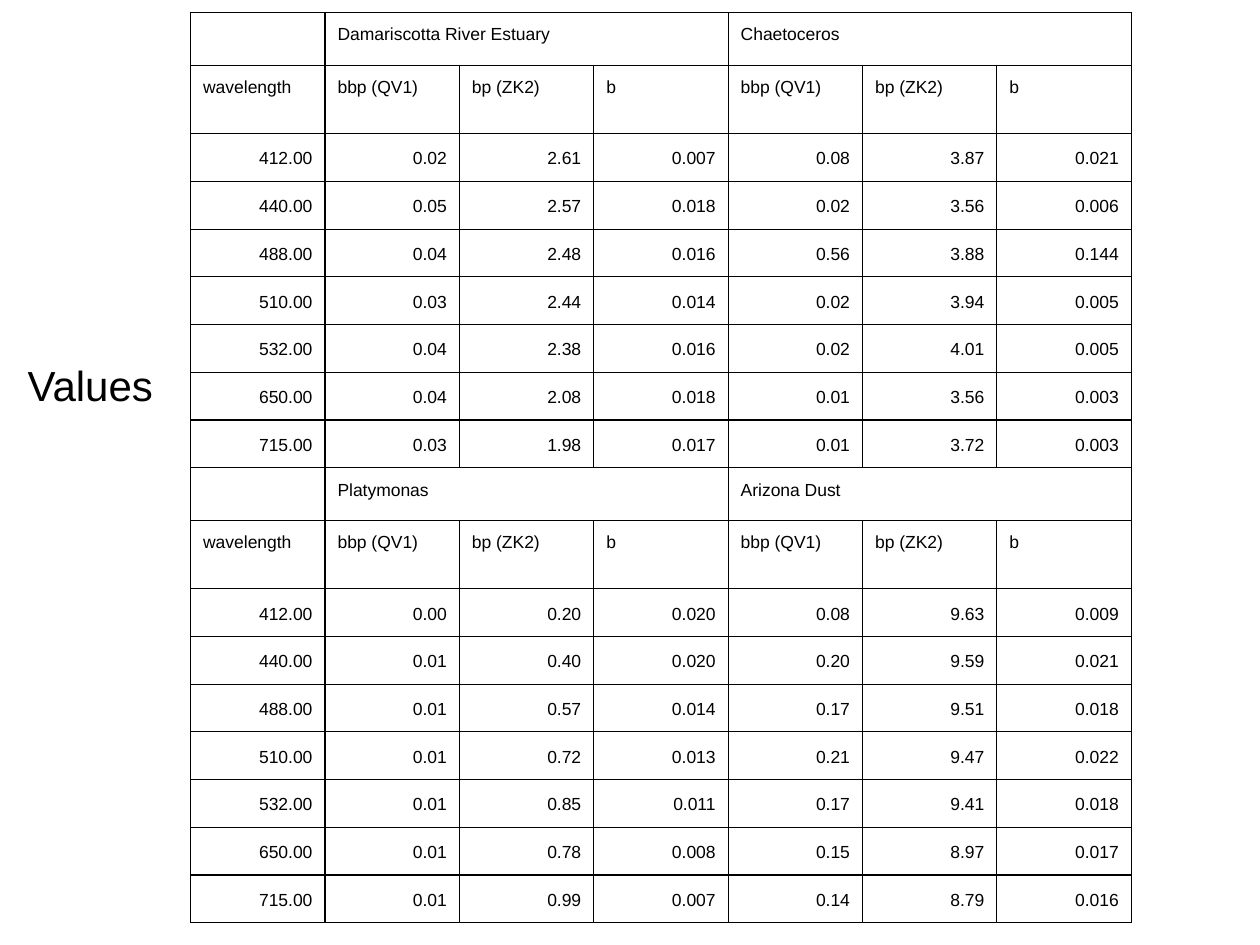
from lxml import etree
from pptx import Presentation
from pptx import util as u
from pptx.dml.color import RGBColor
from pptx.enum import text
from pptx.oxml import ns

Pt = u.Pt
BLACK = RGBColor(0, 0, 0)
WHITE = RGBColor(255, 255, 255)

WAVES = ["412.00", "440.00", "488.00", "510.00", "532.00", "650.00", "715.00"]
HEADS = ["bbp (QV1)", "bp (ZK2)", "b"]
BLOCKS = [
    (("Damariscotta River Estuary", "Chaetoceros"), [
        "0.02 2.61 0.007 0.08 3.87 0.021",
        "0.05 2.57 0.018 0.02 3.56 0.006",
        "0.04 2.48 0.016 0.56 3.88 0.144",
        "0.03 2.44 0.014 0.02 3.94 0.005",
        "0.04 2.38 0.016 0.02 4.01 0.005",
        "0.04 2.08 0.018 0.01 3.56 0.003",
        "0.03 1.98 0.017 0.01 3.72 0.003",
    ]),
    (("Platymonas", "Arizona Dust"), [
        "0.00 0.20 0.020 0.08 9.63 0.009",
        "0.01 0.40 0.020 0.20 9.59 0.021",
        "0.01 0.57 0.014 0.17 9.51 0.018",
        "0.01 0.72 0.013 0.21 9.47 0.022",
        "0.01 0.85 0.011 0.17 9.41 0.018",
        "0.01 0.78 0.008 0.15 8.97 0.017",
        "0.01 0.99 0.007 0.14 8.79 0.016",
    ]),
]
NAME_HIGH, HEAD_HIGH, DATA_HIGH = 30.2, 39, 27.2
COL_WIDE = 76.8


def assign(item, values):
    for key, value in values.items():
        setattr(item, key, value)


class Deck:
    font = "Arial"
    pads = {f"margin_{side}": Pt(7.2) for side in ("left", "top", "right", "bottom")}

    def __init__(self, wide, high):
        self.prs = Presentation()
        assign(self.prs, {"slide_width": Pt(wide), "slide_height": Pt(high)})
        self.slide = self.prs.slides.add_slide(self.prs.slide_layouts[5])
        self.slide.background.fill.solid()
        self.slide.background.fill.fore_color.rgb = WHITE

    def style(self, para, size):
        for run in para.runs:
            assign(run.font, {"name": self.font, "size": Pt(size)})
            run.font.color.rgb = BLACK

    def title(self, words, left, top, wide, high):
        box = self.slide.shapes.title
        assign(box, {"left": Pt(left), "top": Pt(top),
                     "width": Pt(wide), "height": Pt(high)})
        frame = box.text_frame
        frame.text = words
        assign(frame, {**self.pads, "word_wrap": True,
                       "auto_size": text.MSO_AUTO_SIZE.NONE,
                       "vertical_anchor": text.MSO_ANCHOR.MIDDLE})
        para = frame.paragraphs[0]
        para.alignment = text.PP_ALIGN.LEFT
        self.style(para, 24)

    def border(self, cell):
        props = cell._tc.get_or_add_tcPr()
        for side in "LRTB":
            line = etree.SubElement(props, ns.qn(f"a:ln{side}"), w=str(Pt(0.75)))
            fill = etree.SubElement(line, ns.qn("a:solidFill"))
            etree.SubElement(fill, ns.qn("a:srgbClr"), val=str(BLACK))

    def cell(self, cell, words, data):
        cell.text = words
        assign(cell, self.pads)
        self.border(cell)
        cell.fill.background()
        para = cell.text_frame.paragraphs[0]
        if data:
            assign(para, {"alignment": text.PP_ALIGN.RIGHT, "line_spacing": 1.15})
        self.style(para, 10)
        if not words:
            para._p.get_or_add_endParaRPr().set("sz", "1000")

    def table(self, rows, highs, left, top, wide):
        count = len(rows[0])
        frame = self.slide.shapes.add_table(
            len(rows), count, Pt(left), Pt(top), Pt(wide * count), Pt(sum(highs)))
        grid = frame.table
        assign(grid, {"first_row": False, "horz_banding": False})
        for col in grid.columns:
            col.width = Pt(wide)
        for r, (row, high) in enumerate(zip(rows, highs)):
            grid.rows[r].height = Pt(high)
            for c, words in enumerate(row):
                self.cell(grid.cell(r, c), words, high == DATA_HIGH)
            if high == NAME_HIGH:
                for c in (1, 4):
                    grid.cell(r, c).merge(grid.cell(r, c + 2))

    def save(self):
        self.prs.save("out.pptx")


def main():
    rows, highs = [], []
    for (first, second), lines in BLOCKS:
        rows += [["", first, "", "", second, "", ""], ["wavelength"] + HEADS * 2]
        rows += [[wave] + line.split() for wave, line in zip(WAVES, lines)]
        highs += [NAME_HIGH, HEAD_HIGH] + [DATA_HIGH] * len(lines)
    deck = Deck(720, 540)
    deck.table(rows, highs, 108.9, 7.2, COL_WIDE)
    deck.title("Values", 8.6, 197, 88, 46)
    deck.save()


if __name__ == "__main__":
    main()
